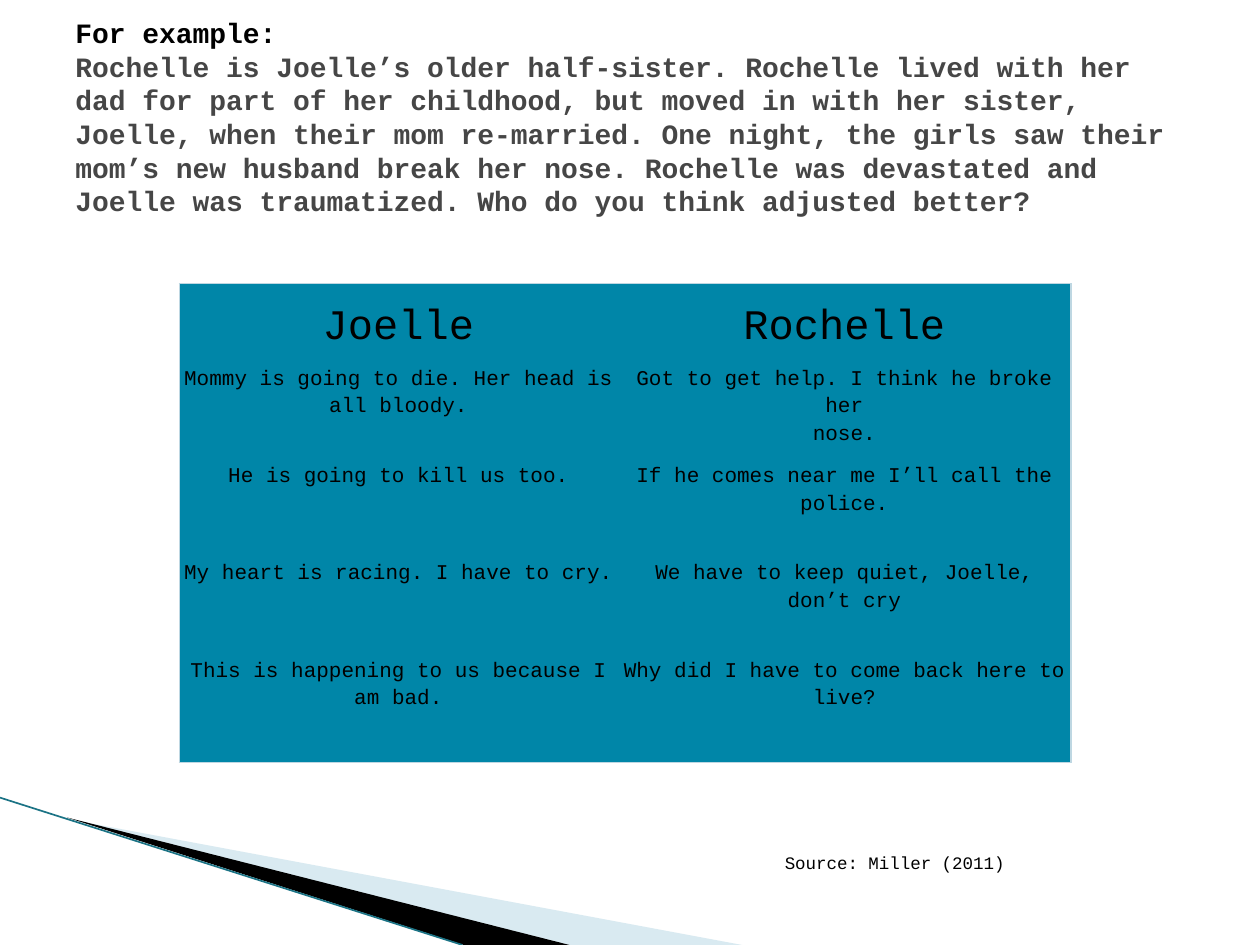
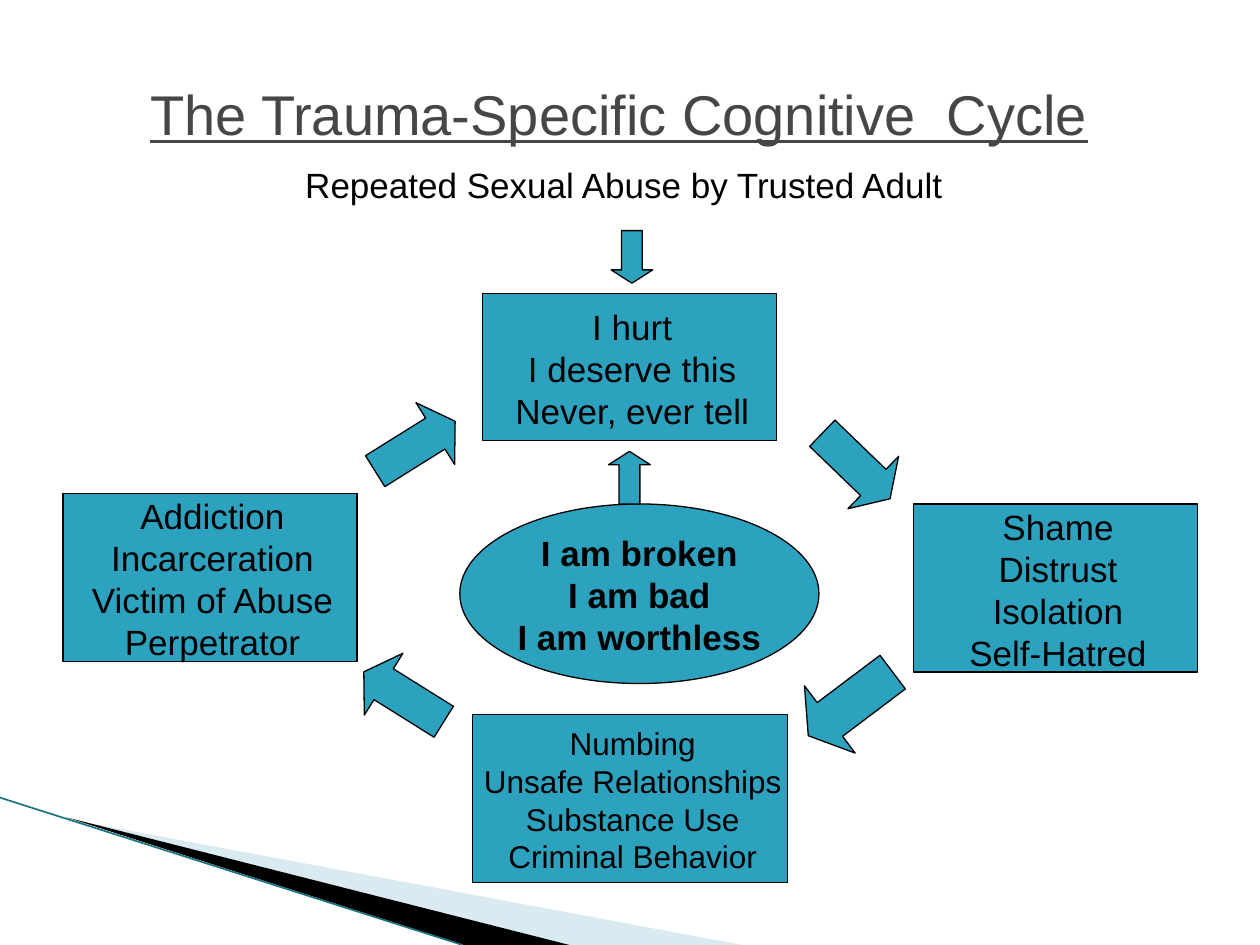
from dataclasses import dataclass, replace

from lxml.etree import SubElement
from pptx import Presentation
from pptx.dml.color import RGBColor
from pptx.enum.shapes import MSO_CONNECTOR, MSO_SHAPE
from pptx.enum.text import MSO_ANCHOR, MSO_AUTO_SIZE, PP_ALIGN
from pptx.oxml.ns import qn
from pptx.util import Cm, Pt


@dataclass(frozen=True)
class Type:
    size: float
    font: str
    color: str
    bold: bool = False
    underline: bool = False


@dataclass(frozen=True)
class Theme:
    black: str = "000000"
    accent: str = "2DA2BF"
    table: str = "0086A8"
    table_edge: str = "BED7E2"
    swoosh: str = "A0CBDC"
    swoosh_line: str = "1B7385"
    edge: float = 0.75
    lead: Type = Type(16, "Courier New", "000000", bold=True)
    story: Type = Type(16, "Courier New", "464646", bold=True)
    names: Type = Type(24, "Courier New", "000000")
    thought: Type = Type(12, "Courier New", "000000")
    source: Type = Type(10, "Courier New", "000000")
    heading: Type = Type(32, "Arial", "464646", underline=True)
    label: Type = Type(20, "Arial", "000000")


@dataclass(frozen=True)
class Box:
    left: float
    top: float
    width: float
    height: float

    def inner(self, left, top, width, height):
        return Box(self.left + left, self.top + top, width, height)

    def lengths(self):
        return Cm(self.left), Cm(self.top), Cm(self.width), Cm(self.height)


THEME = Theme()
PAGE = Box(0, 0, 25.4, 19.05)


def rgb(color):
    return RGBColor.from_string(color)


def write(tf, lines, align=PP_ALIGN.CENTER, spacing=None):
    for i, (text, style) in enumerate(lines):
        p = tf.add_paragraph() if i else tf.paragraphs[0]
        p.alignment = align
        if spacing:
            p.line_spacing = spacing
        r = p.add_run()
        r.text = text
        r.font.size = Pt(style.size)
        r.font.name = style.font
        r.font.bold = style.bold
        r.font.underline = style.underline
        r.font.color.rgb = rgb(style.color)


def frame(tf, anchor, insets=(0.25, 0.13, 0.25, 0.13), wrap=True):
    tf.auto_size = MSO_AUTO_SIZE.NONE
    tf.word_wrap = wrap
    tf.vertical_anchor = anchor
    tf.margin_left, tf.margin_top, tf.margin_right, tf.margin_bottom = map(Cm, insets)
    return tf


def set_title(s, box, lines, align, anchor):
    sp = s.shapes.title
    sp.left, sp.top, sp.width, sp.height = box.lengths()
    write(frame(sp.text_frame, anchor), lines, align)


def add_text(s, box, lines, align, anchor):
    sp = s.shapes.add_textbox(*box.lengths())
    write(frame(sp.text_frame, anchor), lines, align)


def add_block(s, kind, box):
    sp = s.shapes.add_shape(kind, *box.lengths())
    sp.shadow.inherit = False
    sp.fill.solid()
    sp.fill.fore_color.rgb = rgb(THEME.accent)
    sp.line.color.rgb = rgb(THEME.black)
    sp.line.width = Pt(THEME.edge)
    return sp


def add_wedge(s, box, points, color, alpha=None):
    spots = [(Cm(box.left + x), Cm(box.top + y)) for x, y in points]
    builder = s.shapes.build_freeform(*spots[0])
    builder.add_line_segments(spots[1:])
    sp = builder.convert_to_shape()
    sp.shadow.inherit = False
    sp.line.fill.background()
    sp.fill.solid()
    sp.fill.fore_color.rgb = rgb(color)
    if alpha:
        clr = sp.fill._xPr.find(qn("a:solidFill"))[0]
        SubElement(clr, qn("a:alpha")).set("val", str(alpha * 1000))


def add_swoosh(s, box):
    add_wedge(s, box, [(1.4, 0.44), (14.96, box.height), (11.48, box.height)], THEME.swoosh, 40)
    add_wedge(s, box, [(1.35, 0.4), (11.48, box.height), (9.35, box.height)], THEME.black)
    line = s.shapes.add_connector(MSO_CONNECTOR.STRAIGHT, Cm(box.left), Cm(box.top),
                                  Cm(box.left + 9.32), Cm(box.top + box.height))
    line.line.color.rgb = rgb(THEME.swoosh_line)
    line.line.width = Pt(0.95)
    SubElement(line._element.spPr, qn("a:effectLst"))


def new_slide(prs):
    s = prs.slides.add_slide(prs.slide_layouts[5])
    add_swoosh(s, PAGE.inner(0, 16.08, 15, 2.97))
    return s


def set_borders(cell, visible):
    tcPr = cell._tc.get_or_add_tcPr()
    for side in "LRTB":
        ln = SubElement(tcPr, qn(f"a:ln{side}"), w=str(Pt(THEME.edge)))
        if side in visible:
            fill = SubElement(ln, qn("a:solidFill"))
            SubElement(fill, qn("a:srgbClr"), val=THEME.table_edge)
        else:
            SubElement(ln, qn("a:noFill"))


def add_thoughts(s, box, rows, widths, heights):
    table = s.shapes.add_table(len(rows), len(widths), *box.lengths()).table
    table.first_row = table.horz_banding = False
    for column, width in zip(table.columns, widths):
        column.width = Cm(width)
    for i, (row, height) in enumerate(zip(rows, heights)):
        table.rows[i].height = Cm(height)
        for j, lines in enumerate(row):
            cell = table.cell(i, j)
            edges = {"L": j == 0, "R": j == len(widths) - 1,
                     "T": i == 0, "B": i == len(rows) - 1}
            set_borders(cell, [side for side, outer in edges.items() if outer])
            cell.fill.solid()
            cell.fill.fore_color.rgb = rgb(THEME.table)
            cell.margin_left = cell.margin_right = cell.margin_top = cell.margin_bottom = 0
            cell.vertical_anchor = MSO_ANCHOR.TOP if i else MSO_ANCHOR.MIDDLE
            style = THEME.thought if i else THEME.names
            write(cell.text_frame, [(text, style) for text in lines], spacing=1.15)


def add_cycle(s, box):
    rect = MSO_SHAPE.RECTANGLE
    core = replace(THEME.label, bold=True)
    small = replace(THEME.label, size=18)
    stages = [
        (rect, (8.46, 1.27, 5.93, 2.96), THEME.label,
         ["I hurt", "I deserve this", "Never, ever tell"]),
        (rect, (17.15, 5.51, 5.72, 3.39), THEME.label,
         ["Shame", "Distrust", "Isolation", "Self-Hatred"]),
        (rect, (8.26, 9.75, 6.35, 3.39), small,
         ["Numbing", "Unsafe Relationships", "Substance Use", "Criminal Behavior"]),
        (rect, (0, 5.3, 5.93, 3.39), THEME.label,
         ["Addiction", "Incarceration", "Victim of Abuse", "Perpetrator"]),
        (MSO_SHAPE.OVAL, (8, 5.51, 7.24, 3.62), core,
         ["I am broken", "I am bad", "I am worthless"]),
    ]
    for kind, place, style, lines in stages:
        sp = add_block(s, kind, box.inner(*place))
        inset = 0.1 if kind == rect else 0
        tf = frame(sp.text_frame, MSO_ANCHOR.MIDDLE, (inset, 0.05, 0, 0), wrap=False)
        write(tf, [(text, style) for text in lines])

    right = MSO_SHAPE.RIGHT_ARROW
    arrows = [
        (right, (15.04, 4.01, 1.9, 1.47), 44),
        (right, (14.81, 8.69, 2.13, 1.7), 143),
        (right, (5.92, 8.66, 1.9, 1.47), 212),
        (right, (6.15, 3.61, 1.9, 1.47), 328),
        (MSO_SHAPE.UP_ARROW, (11, 4.45, 0.84, 1.06), 0),
        (MSO_SHAPE.DOWN_ARROW, (11.05, 0, 0.84, 1.06), 0),
    ]
    for kind, place, angle in arrows:
        sp = add_block(s, kind, box.inner(*place))
        sp.rotation = angle
        sp.adjustments[0] = 0.5
        sp.adjustments[1] = 0.32


def example_slide(prs):
    s = new_slide(prs)
    set_title(s, PAGE.inner(1.27, 0.76, 22.86, 3.18), [
        ("For example:", THEME.lead),
        ("Rochelle is Joelle’s older half-sister. Rochelle lived with her dad for part of "
         "her childhood, but moved in with her sister, Joelle, when their mom re-married. "
         "One night, the girls saw their mom’s new husband break her nose. Rochelle was "
         "devastated and Joelle was traumatized. Who do you think adjusted better?",
         THEME.story),
    ], PP_ALIGN.LEFT, MSO_ANCHOR.MIDDLE)
    rows = [
        (["Joelle"], ["Rochelle"]),
        (["Mommy is going to die. Her head is", "all bloody."],
         ["Got to get help. I think he broke her", "nose."]),
        (["He is going to kill us too."], ["If he comes near me I’ll call the police."]),
        (["My heart is racing. I have to cry."], ["We have to keep quiet, Joelle, don’t cry"]),
        (["This is happening to us because I", "am bad."],
         ["Why did I have to come back here to", "live?"]),
    ]
    add_thoughts(s, PAGE.inner(3.61, 5.72, 17.98, 9.65), rows,
                 (8.84, 9.14), (1.63, 1.96, 1.96, 1.96, 2.14))
    add_text(s, PAGE.inner(13.97, 16.71, 6.53, 1.02),
             [("Source: Miller (2011)", THEME.source)], PP_ALIGN.RIGHT, MSO_ANCHOR.BOTTOM)


def cycle_slide(prs):
    s = new_slide(prs)
    set_title(s, PAGE.inner(1.73, 1.47, 21.5, 1.56),
              [("The Trauma-Specific Cognitive  Cycle", THEME.heading)],
              PP_ALIGN.CENTER, MSO_ANCHOR.TOP)
    add_text(s, PAGE.inner(1.83, 3.17, 21.5, 1.07),
             [("Repeated Sexual Abuse by Trusted Adult", THEME.label)],
             PP_ALIGN.CENTER, MSO_ANCHOR.TOP)
    add_cycle(s, PAGE.inner(1.27, 4.65, 22.86, 13.13))


def main():
    prs = Presentation()
    prs.slide_width, prs.slide_height = Cm(PAGE.width), Cm(PAGE.height)
    example_slide(prs)
    cycle_slide(prs)
    prs.save("out.pptx")


if __name__ == "__main__":
    main()
